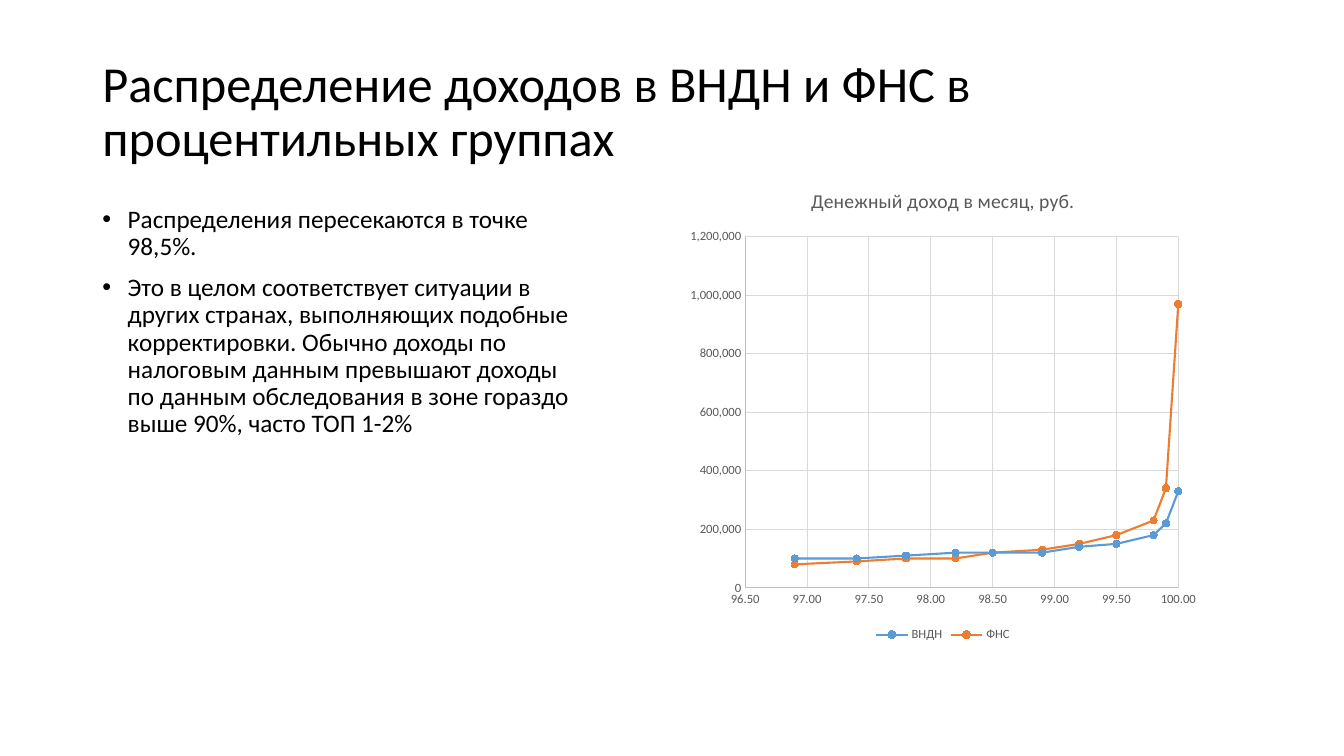
from lxml import etree
from pptx import Presentation
from pptx.chart.data import XyChartData
from pptx.dml.color import RGBColor
from pptx.enum.chart import (XL_CHART_TYPE as ChartType, XL_LEGEND_POSITION as LegendPos,
                             XL_MARKER_STYLE as Marker, XL_TICK_MARK as Tick)
from pptx.enum.text import MSO_ANCHOR as Anchor
from pptx.oxml.ns import qn
from pptx.util import Cm, Pt

COLORS = {"text": "000000", "label": "595959", "axis": "BFBFBF", "grid": "D9D9D9",
          "ВНДН": "5B9BD5", "ФНС": "ED7D31"}

TITLE = "Распределение доходов в ВНДН и ФНС в процентильных группах"
POINTS = [
    "Распределения пересекаются в точке 98,5%.",
    "Это в целом соответствует ситуации в других странах, выполняющих подобные "
    "корректировки. Обычно доходы по налоговым данным превышают доходы по данным "
    "обследования в зоне гораздо выше 90%, часто ТОП 1-2%",
]
PERCENTILES = [100, 99.9, 99.8, 99.5, 99.2, 98.9, 98.5, 98.2, 97.8, 97.4, 96.9]
INCOMES = {
    "ВНДН": [330000, 220000, 180000, 150000, 140000, 120000, 120000, 120000, 110000,
             100000, 100000],
    "ФНС": [970000, 340000, 230000, 180000, 150000, 130000, 120000, 100000, 100000,
            90000, 80000],
}


class Deck:
    """Holds the style and the current slide."""

    font = "Calibri"

    def __init__(self, prs):
        self.s = prs.slides.add_slide(prs.slide_layouts[6])

    def rgb(self, name):
        return RGBColor.from_string(COLORS[name])

    def style(self, font, size, color):
        font.name, font.size, font.bold = self.font, Pt(size), False
        font.color.rgb = self.rgb(color)

    def line(self, line, color, width):
        line.color.rgb = self.rgb(color)
        line.width = Pt(width)

    def text(self, box, paragraphs, size, anchor=Anchor.TOP, bullets=False):
        tf = self.s.shapes.add_textbox(*map(Cm, box)).text_frame
        tf.word_wrap = True
        tf.vertical_anchor = anchor
        for i, words in enumerate(paragraphs):
            p = tf.paragraphs[0] if i == 0 else tf.add_paragraph()
            p.line_spacing = 0.9
            if bullets:
                p.space_before = Pt(10)
                self.bullet(p)
            r = p.add_run()
            r.text = words
            self.style(r.font, size, "text")

    def bullet(self, p):
        pPr = p._p.get_or_add_pPr()
        indent = Cm(0.64)
        pPr.set("marL", str(indent))
        pPr.set("indent", str(-indent))
        etree.SubElement(pPr, qn("a:buFont")).set("typeface", "Arial")
        etree.SubElement(pPr, qn("a:buChar")).set("char", "•")

    def scatter(self, box, title, xs, series, plot_box):
        data = XyChartData()
        for name, ys in series.items():
            new = data.add_series(name)
            for x, y in zip(xs, ys):
                new.add_data_point(x, y)
        chart = self.s.shapes.add_chart(ChartType.XY_SCATTER_LINES, *map(Cm, box), data).chart
        self.style(chart.font, 10, "text")
        chart.has_title = True
        r = chart.chart_title.text_frame.paragraphs[0].add_run()
        r.text = title
        self.style(r.font, 14, "label")
        chart.chart_title.include_in_layout = False
        chart.has_legend = True
        chart.legend.position = LegendPos.BOTTOM
        chart.legend.include_in_layout = False
        self.style(chart.legend.font, 9, "label")
        plot = chart.plots[0]
        plot.vary_by_categories = False
        for ser in plot.series:
            ser.smooth = False
            self.line(ser.format.line, ser.name, 1.5)
            ser.marker.style, ser.marker.size = Marker.CIRCLE, 5
            ser.marker.format.fill.solid()
            ser.marker.format.fill.fore_color.rgb = self.rgb(ser.name)
            self.line(ser.marker.format.line, ser.name, 0.75)
        self.axis(chart.category_axis, 96.5, 100, 0.5, "0.00")
        self.axis(chart.value_axis, 0, 1200000, 200000, "#,##0")
        self.place_plot(chart, plot_box)

    def axis(self, axis, low, high, step, number_format):
        axis.minimum_scale, axis.maximum_scale, axis.major_unit = low, high, step
        axis.major_tick_mark = axis.minor_tick_mark = Tick.NONE
        axis.has_major_gridlines = True
        self.line(axis.major_gridlines.format.line, "grid", 0.75)
        self.line(axis.format.line, "axis", 0.75)
        labels = axis.tick_labels
        labels.number_format, labels.number_format_is_linked = number_format, False
        self.style(labels.font, 9, "label")

    def place_plot(self, chart, plot_box):
        """Fix the inner plot area, given in percent of the chart."""
        area = chart._chartSpace.find(".//" + qn("c:plotArea"))
        for old in area.findall(qn("c:layout")):
            area.remove(old)
        layout = etree.Element(qn("c:layout"))
        area.insert(0, layout)
        manual = etree.SubElement(layout, qn("c:manualLayout"))
        fractions = [percent / 100 for percent in plot_box]
        settings = [("layoutTarget", "inner"), ("xMode", "edge"), ("yMode", "edge"),
                    *zip("xywh", fractions)]
        for tag, value in settings:
            etree.SubElement(manual, qn("c:" + tag)).set("val", str(value))


def main():
    prs = Presentation()
    prs.slide_width, prs.slide_height = Cm(33.87), Cm(19.05)
    deck = Deck(prs)
    deck.text((2.33, 1.01, 29.21, 3.68), [TITLE], 36, anchor=Anchor.MIDDLE)
    deck.text((2.33, 5.08, 12.33, 12.1), POINTS, 18, bullets=True)
    deck.scatter((17.12, 4.26, 13.28, 12.02), "Денежный доход в месяц, руб.",
                 PERCENTILES, INCOMES, (12.5, 14.2, 82.2, 73.6))
    prs.save("out.pptx")


if __name__ == "__main__":
    main()
